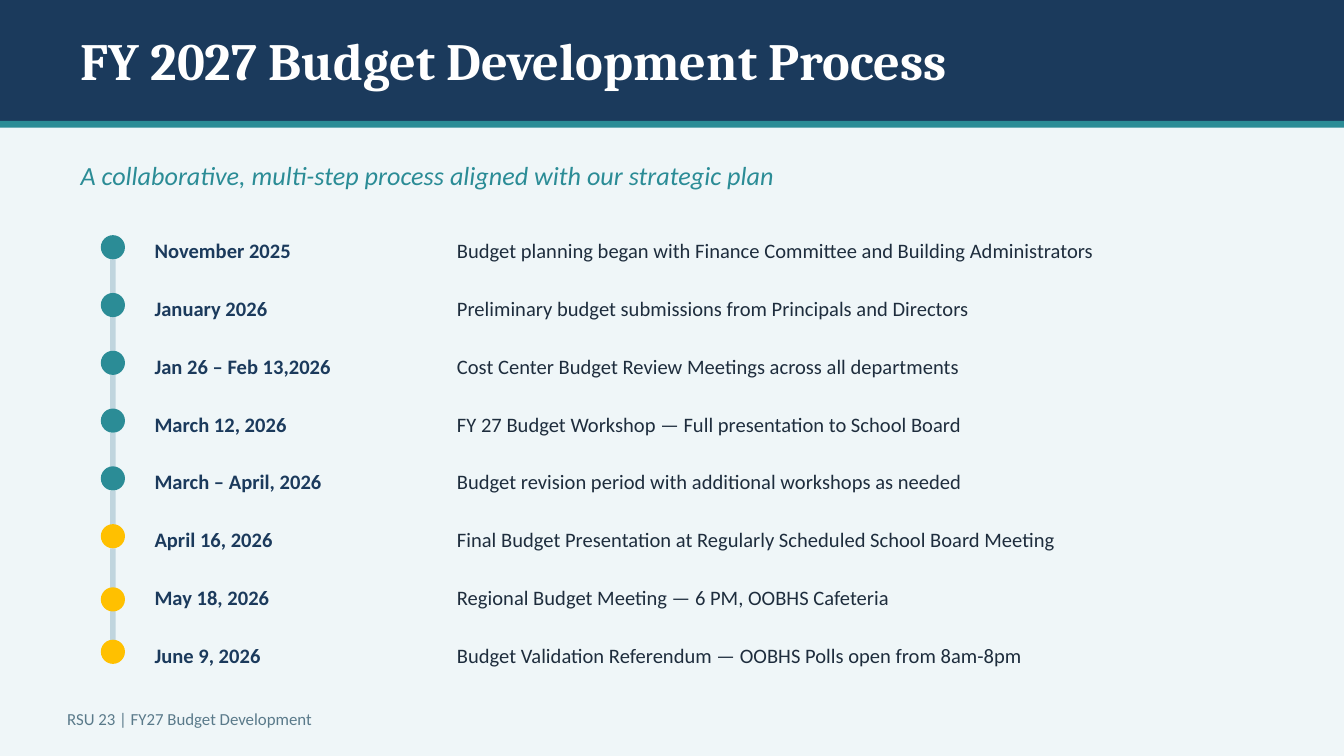
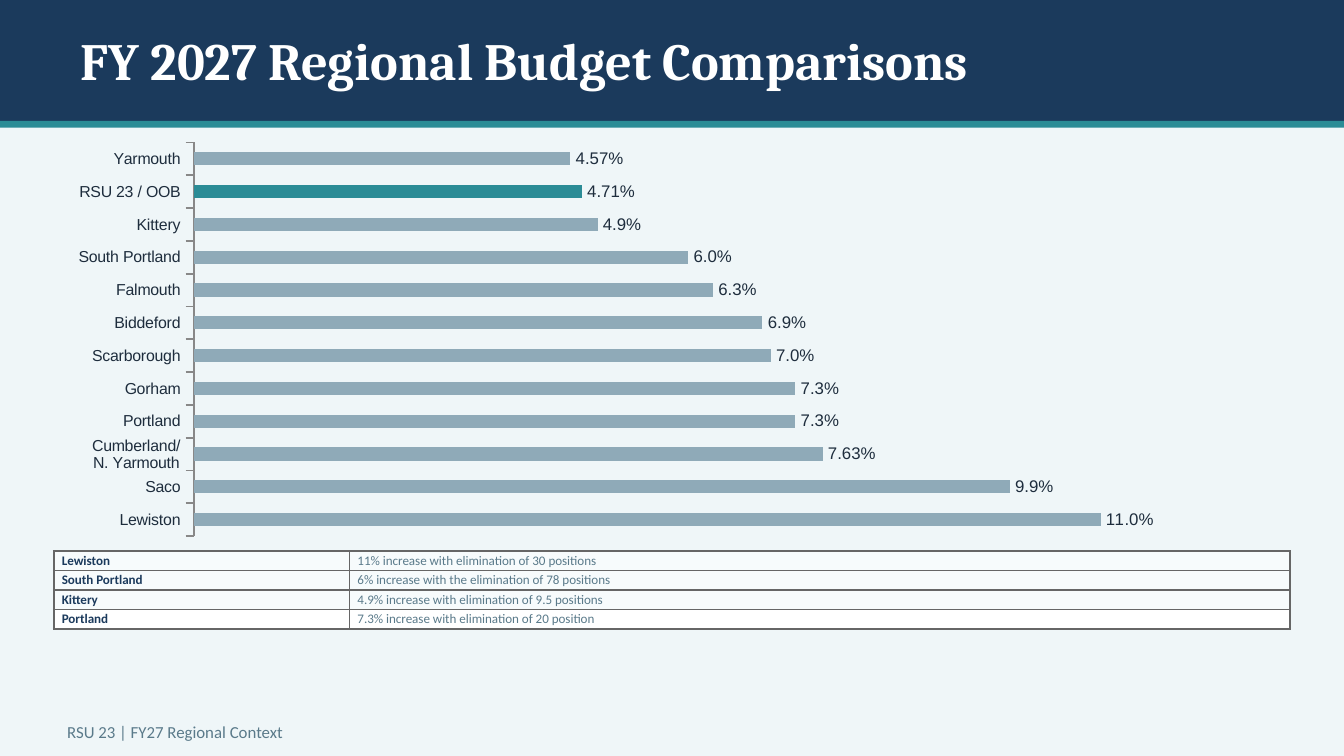
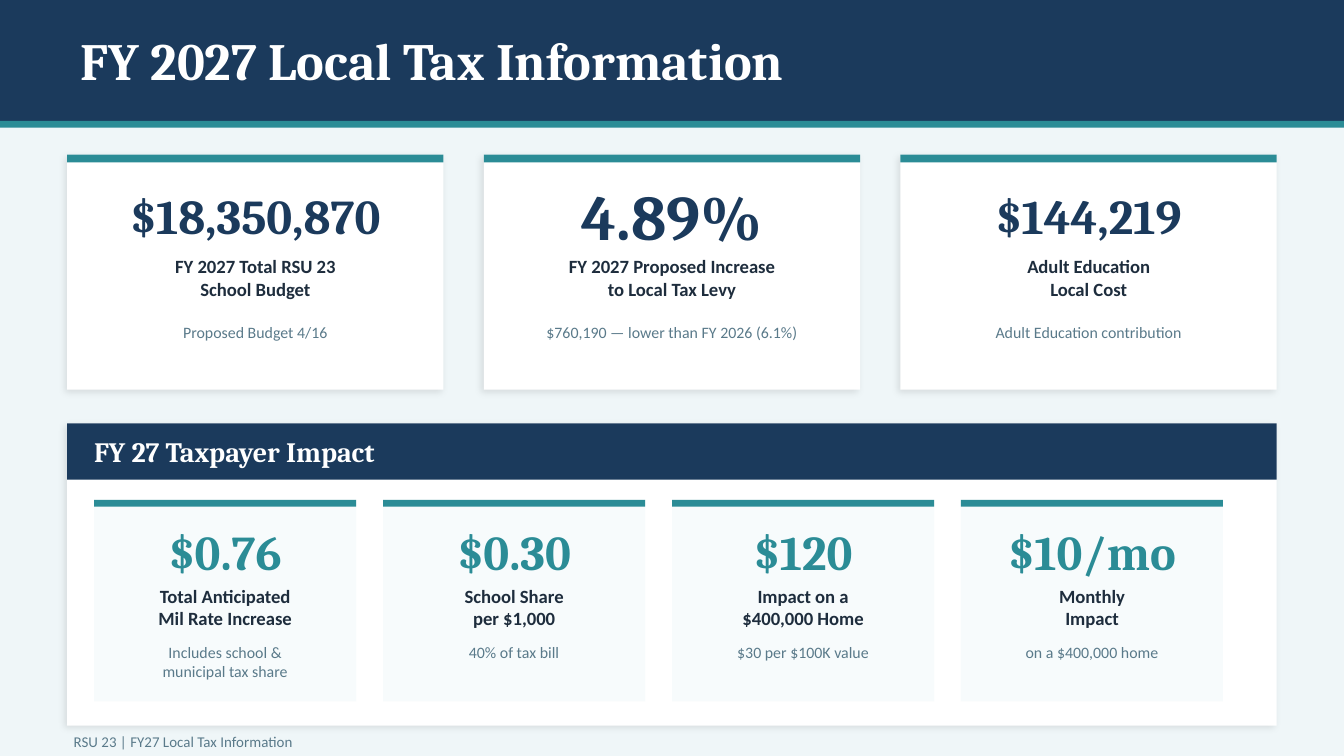
from lxml import etree
from pptx import Presentation
from pptx.chart.data import CategoryChartData
from pptx.dml.color import RGBColor
from pptx.enum.chart import XL_CHART_TYPE, XL_LABEL_POSITION, XL_TICK_MARK
from pptx.enum.shapes import MSO_SHAPE
from pptx.enum.text import MSO_ANCHOR, MSO_AUTO_SIZE, PP_ALIGN
from pptx.oxml.ns import qn
from pptx.util import Inches, Pt

RECTANGLE, OVAL = MSO_SHAPE.RECTANGLE, MSO_SHAPE.OVAL
LEFT, CENTER = PP_ALIGN.LEFT, PP_ALIGN.CENTER
TOP, MIDDLE = MSO_ANCHOR.TOP, MSO_ANCHOR.MIDDLE
NO_AUTOFIT = MSO_AUTO_SIZE.NONE
BAR_CLUSTERED = XL_CHART_TYPE.BAR_CLUSTERED
OUTSIDE_END = XL_LABEL_POSITION.OUTSIDE_END
TICK_OUTSIDE = XL_TICK_MARK.OUTSIDE

NAVY, TEAL, GOLD = "1B3A5C", "2B8C96", "FFC000"
INK, SLATE, WHITE = "1E2D3D", "5A7A8A", "FFFFFF"
BACKGROUND, PALE, RAIL = "EFF6F8", "F7FBFC", "C0D5DE"
BAR, AXIS, BORDER = "8FAAB8", "888888", "666666"
HEADING, BODY, CHART_FONT = "Cambria", "Calibri", "Arial"
TITLE_ONLY = 5


def color(value):
    return RGBColor.from_string(value)


def set_font(font, size, value, name=BODY, bold=False, italic=False):
    font.name, font.size = name, Pt(size)
    font.bold, font.italic = bold, italic
    font.color.rgb = color(value)


class Painter:
    """Holds the deck style and the current slide."""

    def __init__(self):
        self.deck = Presentation()
        self.deck.slide_width = Inches(10)
        self.deck.slide_height = self.deck.slide_width * 9 // 16
        fill = self.deck.slide_master.background.fill
        fill.solid()
        fill.fore_color.rgb = color(BACKGROUND)
        self.page = None

    def new_page(self, title):
        self.page = self.deck.slides.add_slide(self.deck.slide_layouts[TITLE_ONLY])
        band = self.shape(0, 0, 10, 0.9, NAVY)
        self.shape(0, 0.9, 10, 0.05, TEAL)
        box = self.page.shapes.title
        band.element.addnext(box.element)  # bring the title in front of its band
        box.left, box.top = Inches(0.6), Inches(0.12)
        box.width, box.height = Inches(9), Inches(0.65)
        self.set_text(box, title, 28, WHITE, name=HEADING, bold=True)

    def shape(self, left, top, width, height, fill, kind=RECTANGLE, shadow=False):
        shape = self.page.shapes.add_shape(
            kind, Inches(left), Inches(top), Inches(width), Inches(height))
        shape.fill.solid()
        shape.fill.fore_color.rgb = color(fill)
        shape.line.fill.background()
        shape.shadow.inherit = False
        if shadow:
            self.soft_shadow(shape)
        return shape

    def soft_shadow(self, shape):
        effects = shape.element.spPr.find(qn("a:effectLst"))
        outer = etree.SubElement(
            effects, qn("a:outerShdw"), blurRad=str(Pt(4)), dist=str(Pt(2)),
            dir=str(135 * 60000), algn="bl", rotWithShape="0")
        tint = etree.SubElement(outer, qn("a:srgbClr"), val="000000")
        etree.SubElement(tint, qn("a:alpha"), val="10000")

    def text(self, left, top, width, height, words, size, value, **style):
        box = self.page.shapes.add_textbox(
            Inches(left), Inches(top), Inches(width), Inches(height))
        self.set_text(box, words, size, value, **style)

    def set_text(self, box, words, size, value, align=LEFT, anchor=MIDDLE,
                 insets=(0, 0), **font):
        frame = box.text_frame
        frame.text = words
        frame.word_wrap, frame.auto_size = True, NO_AUTOFIT
        frame.vertical_anchor = anchor
        frame.margin_left = frame.margin_right = Inches(insets[0])
        frame.margin_top = frame.margin_bottom = Inches(insets[1])
        for para in frame.paragraphs:
            para.alignment = align
            for span in para.runs:
                set_font(span.font, size, value, **font)

    def footer(self, topic, left=0.5, top=5.2, width=9, height=0.3, size=9, **style):
        self.text(left, top, width, height, f"RSU 23 | FY27 {topic}", size, SLATE, **style)

    def bar_chart(self, left, top, width, height, rows, highlight, maximum):
        names = [name for name, _ in rows]
        data = CategoryChartData()
        data.categories = names
        data.add_series("Series 1", [value for _, value in rows])
        chart = self.page.shapes.add_chart(
            BAR_CLUSTERED, Inches(left), Inches(top), Inches(width), Inches(height),
            data).chart
        chart.has_legend = chart.has_title = False
        set_font(chart.font, 10, "000000")

        name_axis, value_axis = chart.category_axis, chart.value_axis
        set_font(name_axis.tick_labels.font, 8.5, INK, CHART_FONT)
        name_axis.major_tick_mark = TICK_OUTSIDE
        name_axis.has_major_gridlines = value_axis.has_major_gridlines = False
        name_axis.format.line.color.rgb = color(AXIS)
        name_axis.format.line.width = Pt(1)
        value_axis.minimum_scale, value_axis.maximum_scale = 0, maximum
        value_axis.visible = False

        plot = chart.plots[0]
        plot.gap_width, plot.vary_by_categories = 150, False
        series = plot.series[0]
        highlighted = series.points[names.index(highlight)]
        for target, fill in ((series, BAR), (highlighted, TEAL)):
            target.format.fill.solid()
            target.format.fill.fore_color.rgb = color(fill)
        labels = series.data_labels
        labels.show_value, labels.position = True, OUTSIDE_END
        labels.number_format, labels.number_format_is_linked = r"0.0#\%", False
        set_font(labels.font, 9, INK, CHART_FONT)

    def table(self, left, top, widths, height, rows):
        table = self.page.shapes.add_table(
            len(rows), len(widths), Inches(left), Inches(top),
            Inches(sum(widths)), Inches(height)).table
        table.first_row = table.horz_banding = False
        for column, width in zip(table.columns, widths):
            column.width = Inches(width)
        for row_index, (*words, fill) in enumerate(rows):
            for column_index, content in enumerate(words):
                cell = table.cell(row_index, column_index)
                self.cell_borders(cell)
                cell.fill.solid()
                cell.fill.fore_color.rgb = color(fill)
                cell.vertical_anchor = MIDDLE
                cell.margin_left = cell.margin_right = Inches(0.06)
                cell.margin_top = cell.margin_bottom = Inches(0.01)
                cell.text = content
                is_name = column_index == 0
                set_font(cell.text_frame.paragraphs[0].runs[0].font, 7,
                         NAVY if is_name else SLATE, bold=is_name)

    def cell_borders(self, cell):
        properties = cell._tc.get_or_add_tcPr()
        for side in ("lnL", "lnR", "lnT", "lnB"):
            line = etree.SubElement(properties, qn(f"a:{side}"), w=str(Pt(1)))
            fill = etree.SubElement(line, qn("a:solidFill"))
            etree.SubElement(fill, qn("a:srgbClr"), val=BORDER)

    def caption(self, left, top, width, height, words, **style):
        self.text(left, top, width, height, words, align=CENTER, anchor=TOP, **style)

    def budget_card(self, left, figure, size, label, note):
        top, width = 1.15, 2.8
        self.shape(left, top, width, 1.75, WHITE, shadow=True)
        self.shape(left, top, width, 0.06, TEAL)
        self.text(left, 1.3, width, 0.6, figure, size, NAVY,
                  name=HEADING, bold=True, align=CENTER)
        self.caption(left + 0.15, 1.9, 2.5, 0.5, label, size=10, value=INK, bold=True)
        self.caption(left + 0.15, 2.4, 2.5, 0.35, note, size=8.5, value=SLATE)

    def impact_card(self, left, figure, label, note):
        top, width = 3.72, 1.95
        self.shape(left, top, width, 1.5, PALE)
        self.shape(left, top, width, 0.05, TEAL)
        self.text(left, 3.85, width, 0.5, figure, 26, TEAL,
                  name=HEADING, bold=True, align=CENTER)
        self.caption(left + 0.1, 4.35, 1.75, 0.45, label, size=10, value=INK, bold=True)
        self.caption(left + 0.1, 4.78, 1.75, 0.35, note, size=8.5, value=SLATE)


def process_page(painter):
    painter.new_page("FY 2027 Budget Development Process")
    painter.text(0.6, 1.1, 8.8, 0.4,
                 "A collaborative, multi-step process aligned with our strategic plan",
                 14, TEAL, italic=True)
    # Date, event, dot colour, dot offset below the row's usual place
    milestones = [
        ("November 2025",
         "Budget planning began with Finance Committee and Building Administrators", TEAL, 0),
        ("January 2026",
         "Preliminary budget submissions from Principals and Directors", TEAL, 0),
        ("Jan 26 – Feb 13,2026",
         "Cost Center Budget Review Meetings across all departments", TEAL, 0),
        ("March 12, 2026",
         "FY 27 Budget Workshop — Full presentation to School Board", TEAL, 0),
        ("March – April, 2026",
         "Budget revision period with additional workshops as needed", TEAL, 0),
        ("April 16, 2026",
         "Final Budget Presentation at Regularly Scheduled School Board Meeting", GOLD, 0),
        ("May 18, 2026", "Regional Budget Meeting — 6 PM, OOBHS Cafeteria", GOLD, 0.04),
        ("June 9, 2026",
         "Budget Validation Referendum — OOBHS Polls open from 8am-8pm", GOLD, 0),
    ]
    step = 0.43
    tops = [1.65 + step * index for index in range(len(milestones))]
    for top in tops[:-1]:
        painter.shape(0.82, top + 0.28, 0.04, 0.35, RAIL)
    for top, (date, event, dot, offset) in zip(tops, milestones):
        painter.shape(0.75, top + 0.1 + offset, 0.18, 0.18, dot, OVAL)
        painter.text(1.15, top, 2.2, step, date, 11, NAVY, bold=True)
        painter.text(3.4, top, 6, step, event, 11, INK)
    painter.footer("Budget Development")


def regional_page(painter):
    painter.new_page("FY 2027 Regional Budget Comparisons")
    increases = [
        ("Lewiston", 11), ("Saco", 9.9), ("Cumberland/\nN. Yarmouth", 7.63),
        ("Portland", 7.3), ("Gorham", 7.3), ("Scarborough", 7), ("Biddeford", 6.9),
        ("Falmouth", 6.3), ("South Portland", 6), ("Kittery", 4.9),
        ("RSU 23 / OOB", 4.71), ("Yarmouth", 4.57),
    ]
    painter.bar_chart(0.4, 1, 9.2, 3.05, increases, "RSU 23 / OOB", 13)
    painter.table(0.4, 4.1, (2.2, 7), 0.58, [
        ("Lewiston", "11% increase with elimination of 30 positions", PALE),
        ("South Portland", "6% increase with the elimination of 78 positions", PALE),
        ("Kittery", "4.9% increase with elimination of 9.5 positions", PALE),
        ("Portland", "7.3% increase with elimination of 20 position", WHITE),
    ])
    painter.footer("Regional Context", top=5.32, height=0.25)


def tax_page(painter):
    painter.new_page("FY 2027 Local Tax Information")
    # Budget figures
    budget = [
        ("$18,350,870", 26, "FY 2027 Total RSU 23\nSchool Budget", "Proposed Budget 4/16"),
        ("4.89%", 34, "FY 2027 Proposed Increase\nto Local Tax Levy",
         "$760,190 — lower than FY 2026 (6.1%)"),
        ("$144,219", 26, "Adult Education\nLocal Cost", "Adult Education contribution"),
    ]
    for index, card in enumerate(budget):
        painter.budget_card(0.5 + 3.1 * index, *card)

    # Taxpayer impact panel
    painter.shape(0.5, 3.15, 9, 2.25, WHITE, shadow=True)
    painter.shape(0.5, 3.15, 9, 0.42, NAVY)
    painter.text(0.7, 3.18, 8.6, 0.36, "FY 27 Taxpayer Impact", 15, WHITE,
                 name=HEADING, bold=True)
    impact = [
        ("$0.76", "Total Anticipated\nMil Rate Increase",
         "Includes school &\nmunicipal tax share"),
        ("$0.30", "School Share\nper $1,000", "40% of tax bill"),
        ("$120", "Impact on a\n$400,000 Home", "$30 per $100K value"),
        ("$10/mo", "Monthly\nImpact", "on a $400,000 home"),
    ]
    for index, card in enumerate(impact):
        painter.impact_card(0.7 + 2.15 * index, *card)
    painter.footer("Local Tax Information", 0.45, 5.4, 5, 0.24, 8,
                   anchor=TOP, insets=(0.1, 0.05))


def main():
    painter = Painter()
    process_page(painter)
    regional_page(painter)
    tax_page(painter)
    painter.deck.save("out.pptx")


if __name__ == "__main__":
    main()
